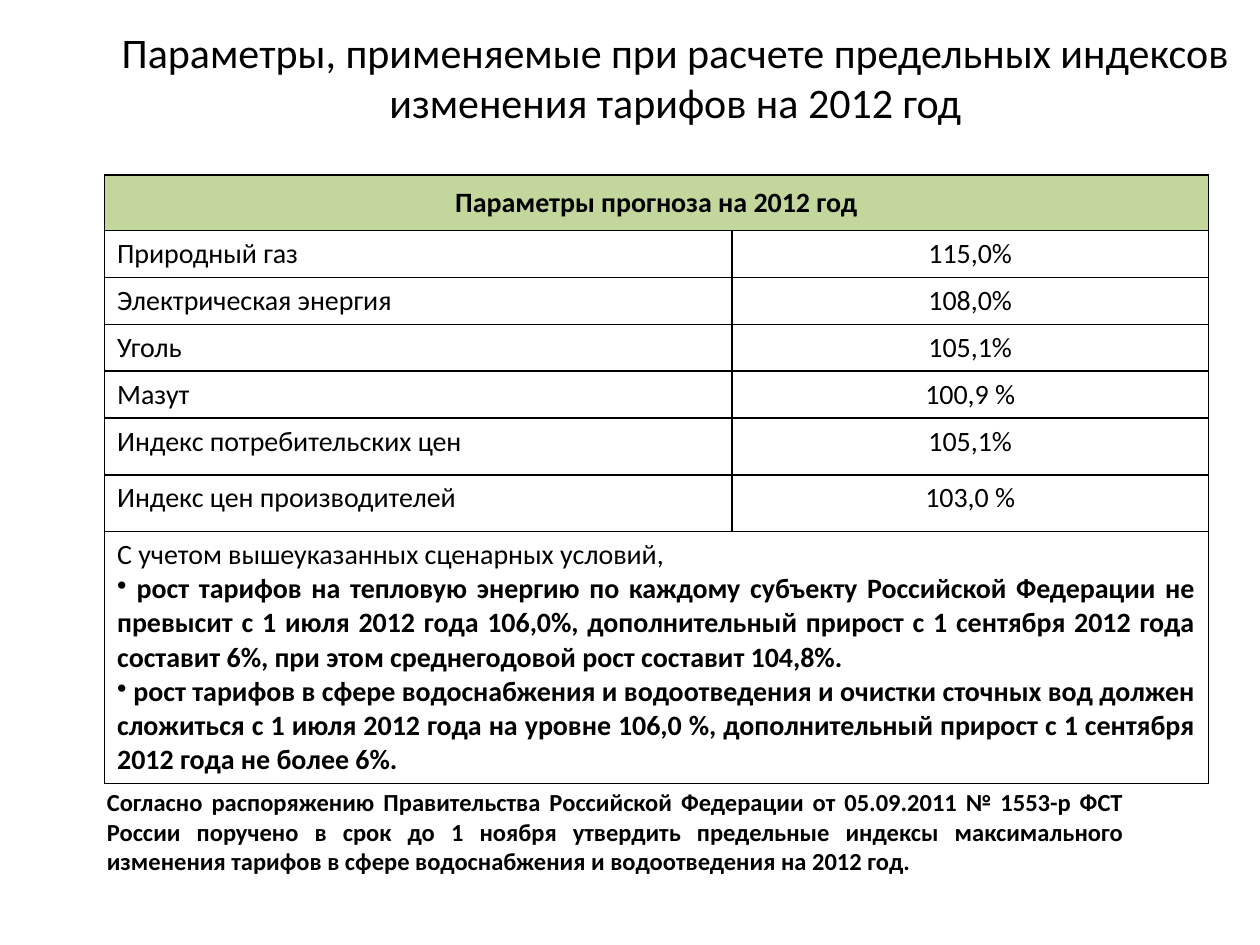
from typing import NamedTuple

from lxml import etree
from pptx import Presentation
from pptx import util as u
from pptx.dml.color import RGBColor
from pptx.enum import text
from pptx.oxml import ns

BLACK = "000000"
WHITE = "FFFFFF"
HEADER_GREEN = "C3D69B"
LEFT = text.PP_ALIGN.LEFT
CENTER = text.PP_ALIGN.CENTER
JUSTIFY = text.PP_ALIGN.JUSTIFY


class Box(NamedTuple):
    left: float
    top: float
    width: float
    height: float


class Line(NamedTuple):
    words: str
    size: int = 16
    bold: bool = False
    align: text.PP_ALIGN = LEFT
    bullet: bool = False


class Parameter(NamedTuple):
    name: str
    value: str
    height: float = 0.37


TITLE = [
    Line("Параметры, применяемые при расчете предельных индексов", 24, align=CENTER),
    Line("изменения тарифов на 2012 год", 24, align=CENTER),
]
HEADER = Line("Параметры прогноза на 2012 год", bold=True, align=CENTER)
PARAMETERS = [
    Parameter("Природный газ", "115,0%"),
    Parameter("Электрическая энергия", "108,0%"),
    Parameter("Уголь", "105,1%"),
    Parameter("Мазут", "100,9 %"),
    Parameter("Индекс потребительских цен", "105,1%", 0.45),
    Parameter("Индекс цен производителей", "103,0 %", 0.45),
]
CONCLUSIONS = [
    Line("С учетом вышеуказанных сценарных условий,", align=JUSTIFY),
    Line(
        " рост тарифов на тепловую энергию по каждому субъекту Российской Федерации "
        "не превысит с 1 июля 2012 года 106,0%, дополнительный прирост с 1 сентября "
        "2012 года составит 6%, при этом среднегодовой рост составит 104,8%.",
        bold=True, align=JUSTIFY, bullet=True,
    ),
    Line(
        " рост тарифов в сфере водоснабжения и водоотведения и очистки сточных вод "
        "должен сложиться с 1 июля 2012 года на уровне 106,0 %, дополнительный "
        "прирост с 1 сентября 2012 года не более 6%.",
        bold=True, align=JUSTIFY, bullet=True,
    ),
]
FOOTNOTE = Line(
    "Согласно распоряжению Правительства Российской Федерации от 05.09.2011 № 1553-р "
    "ФСТ России поручено в срок до 1 ноября утвердить предельные индексы максимального "
    "изменения тарифов в сфере водоснабжения и водоотведения на 2012 год.",
    14, True, JUSTIFY,
)


def color(value: str) -> RGBColor:
    return RGBColor.from_string(value)


def apply(target, formats: dict) -> None:
    for name, value in formats.items():
        setattr(target, name, value)


def place(box: Box) -> dict:
    return {name: u.Inches(value) for name, value in box._asdict().items()}


def write(frame, lines: list[Line]) -> None:
    for index, line in enumerate(lines):
        paragraph = frame.add_paragraph() if index else frame.paragraphs[0]
        apply(paragraph, {"alignment": line.align, "line_spacing": 1.0,
                          "space_before": u.Pt(0), "space_after": u.Pt(0)})
        run = paragraph.add_run()
        run.text = line.words
        apply(run.font, {"name": "Calibri", "size": u.Pt(line.size), "bold": line.bold})
        run.font.color.rgb = color(BLACK)
        if line.bullet:
            properties = paragraph._p.get_or_add_pPr()
            properties.set("marL", "0")
            properties.set("indent", "0")
            etree.SubElement(properties, ns.qn("a:buChar"), char="•")


def add_borders(cell) -> None:
    properties = cell._tc.get_or_add_tcPr()
    for index, side in enumerate(("lnL", "lnR", "lnT", "lnB")):
        border = etree.Element(ns.qn(f"a:{side}"), w=str(u.Pt(1)))
        fill = etree.SubElement(border, ns.qn("a:solidFill"))
        etree.SubElement(fill, ns.qn("a:srgbClr"), val=BLACK)
        properties.insert(index, border)


def add_parameter_table(slide, box: Box) -> None:
    heights = [0.44, *(parameter.height for parameter in PARAMETERS), 1.97]
    table = slide.shapes.add_table(len(heights), 2, *place(box).values()).table
    for column, width in zip(table.columns, (4.98, 3.78)):
        column.width = u.Inches(width)
    for row, height in zip(table.rows, heights):
        row.height = u.Inches(height)
    for cell in table.iter_cells():
        cell.fill.solid()
        cell.fill.fore_color.rgb = color(WHITE)
        add_borders(cell)

    last = len(heights) - 1
    for row in (0, last):
        table.cell(row, 0).merge(table.cell(row, 1))
    for column in range(2):
        table.cell(0, column).fill.fore_color.rgb = color(HEADER_GREEN)
    table.cell(0, 0).vertical_anchor = text.MSO_ANCHOR.MIDDLE
    write(table.cell(0, 0).text_frame, [HEADER])
    for row, parameter in enumerate(PARAMETERS, 1):
        write(table.cell(row, 0).text_frame, [Line(parameter.name)])
        write(table.cell(row, 1).text_frame, [Line(parameter.value, align=CENTER)])
    write(table.cell(last, 0).text_frame, CONCLUSIONS)


def main() -> None:
    presentation = Presentation()
    apply(presentation, {"slide_width": u.Inches(10), "slide_height": u.Inches(7.5)})
    slide = presentation.slides.add_slide(presentation.slide_layouts[5])

    title = slide.shapes.title
    apply(title, place(Box(0.82, 0.16, 9.08, 1.31)))
    apply(title.text_frame, {"word_wrap": False, "auto_size": text.MSO_AUTO_SIZE.NONE,
                             "vertical_anchor": text.MSO_ANCHOR.TOP})
    write(title.text_frame, TITLE)

    add_parameter_table(slide, Box(0.83, 1.39, 8.76, 4.78))

    footnote = slide.shapes.add_textbox(*place(Box(0.75, 6.2, 8.27, 0.8)).values())
    footnote.text_frame.word_wrap = True
    write(footnote.text_frame, [FOOTNOTE])

    presentation.save("out.pptx")


if __name__ == "__main__":
    main()
